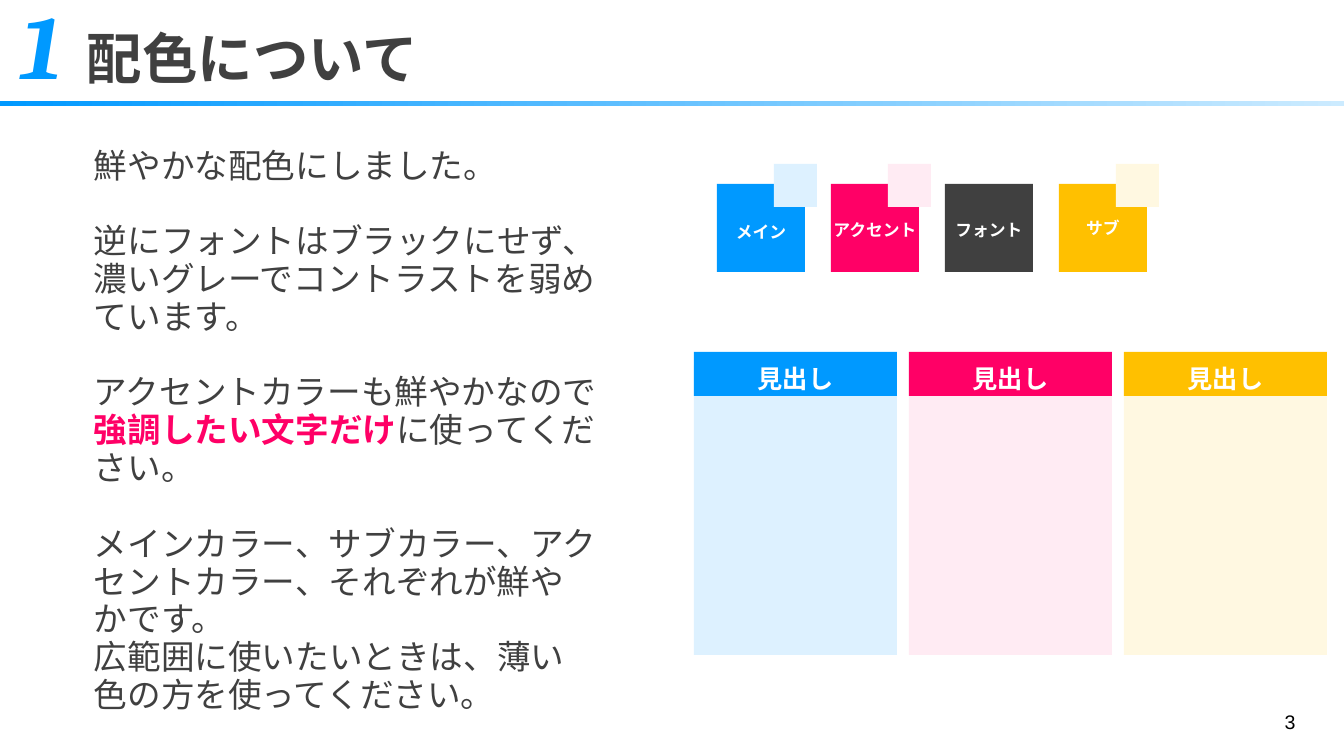
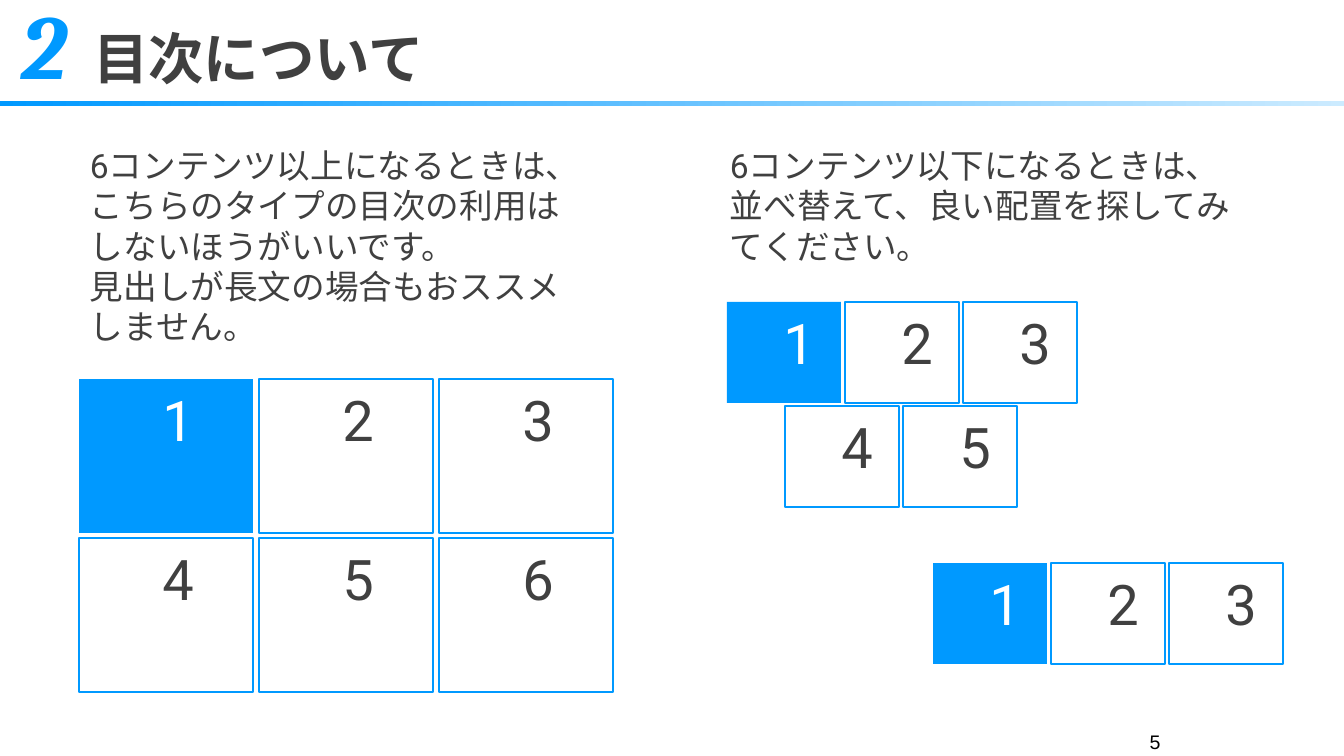
from lxml.etree import SubElement
from pptx import Presentation
from pptx.dml.color import RGBColor
from pptx.enum.shapes import MSO_SHAPE as Shape
from pptx.enum.text import MSO_ANCHOR as Anchor, PP_ALIGN as Align
from pptx.oxml.ns import qn
from pptx.util import Pt

PX = 9072
BLUE, PINK, YELLOW, GRAY = "0099FF", "FF0066", "FFC000", "404040"
PALE_BLUE, PALE_PINK, PALE_YELLOW = "DDF1FF", "FFEBF3", "FFF8E1"
WHITE, BLACK = "FFFFFF", "000000"


def color(code):
    return RGBColor.from_string(code)


def put(slide, place, text="", fill=None, line=None, size=24, font="Roboto", ink=GRAY,
        bold=False, italic=False, align=Align.LEFT, anchor=Anchor.TOP, inset=(10, 5, 10, 5),
        wrap=True, spacing=None, before=(), indent=0):
    box = [n * PX for n in place]
    if fill:
        item = slide.shapes.add_shape(Shape.RECTANGLE, *box)
        item.shadow.inherit = False
        item.fill.solid()
        item.fill.fore_color.rgb = color(fill)
        if line:
            item.line.color.rgb = color(line)
            item.line.width = Pt(1)
        else:
            item.line.fill.background()
    else:
        item = slide.shapes.add_textbox(*box)
    if not text:
        return item
    frame = item.text_frame
    frame.word_wrap = wrap
    frame.vertical_anchor = anchor
    frame.margin_left, frame.margin_top, frame.margin_right, frame.margin_bottom = [
        n * PX for n in inset]
    paragraphs = [text] if isinstance(text, str) else text
    for i, content in enumerate(paragraphs):
        para = frame.paragraphs[0] if i == 0 else frame.add_paragraph()
        para.alignment = align
        if spacing:
            para.line_spacing = spacing
        if i in before:
            para.space_before = spacing
        if indent:
            para._p.get_or_add_pPr().set("marL", str(indent * PX))
        for words, style in [(content, {})] if isinstance(content, str) else content:
            run = para.add_run()
            run.text = words
            run.font.size = Pt(style.get("size", size))
            run.font.name = style.get("font", font)
            run.font.bold = style.get("bold", bold)
            run.font.italic = style.get("italic", italic)
            run.font.color.rgb = color(style.get("ink", ink))
            SubElement(run.font._element, qn("a:ea")).set("typeface", run.font.name)
    return item


deck = Presentation()
deck.slide_width, deck.slide_height = 1344 * PX, 756 * PX

slides = []
for number, title, page, page_left, page_top in [
    ("1", "配色について", "3", 1260, 705),
    ("2", "目次について", "5", 1125, 725),
]:
    slide = deck.slides.add_slide(deck.slide_layouts[6])
    slides.append(slide)
    rule = put(slide, (0, 101, 1344, 5), fill=BLUE)
    rule.fill.gradient()
    rule.fill.gradient_angle = 0
    for stop, shade in zip(rule.fill.gradient_stops, (BLUE, "CCEBFF")):
        stop.color.rgb = color(shade)
    heading = [
        (number, dict(size=64.8, font="Cambria", ink=BLUE, italic=True)),
        (" ", dict(size=72)),
        (title, dict(size=39.6)),
    ]
    put(slide, (0, 0, 1344, 93), [heading], bold=True, anchor=Anchor.MIDDLE,
        spacing=0.9, indent=12)
    put(slide, (page_left, page_top, 60, 40), page, size=14, font="Arial", ink=BLACK,
        align=Align.CENTER)

colors_slide, contents_slide = slides

put(colors_slide, (84, 142, 523, 583), [
    "鮮やかな配色にしました。",
    "逆にフォントはブラックにせず、濃いグレーでコントラストを弱めています。",
    [("アクセントカラーも鮮やかなので", {}),
     ("強調したい文字だけ", dict(ink=PINK, bold=True)),
     ("に使ってください。", {})],
    "メインカラー、サブカラー、アクセントカラー、それぞれが鮮やかです。",
    "広範囲に使いたいときは、薄い色の方を使ってください。",
], spacing=Pt(27), before=(1, 2, 3))

for i, (label, shade, tint, label_top) in enumerate([
    ("メイン", BLUE, PALE_BLUE, 38),
    ("アクセント", PINK, PALE_PINK, 36),
    ("フォント", GRAY, None, 36),
    ("サブ", YELLOW, PALE_YELLOW, 34),
]):
    left = 717 + 114 * i
    put(colors_slide, (left, 184, 88, 88), label, fill=shade, size=12, ink=WHITE, bold=True,
        align=Align.CENTER, inset=(0, label_top, 0, 0), wrap=False)
    if tint:
        put(colors_slide, (left + 57, 164, 43, 43), fill=tint)

for i, (shade, tint) in enumerate([
    (BLUE, PALE_BLUE), (PINK, PALE_PINK), (YELLOW, PALE_YELLOW),
]):
    left = 694 + 215 * i
    put(colors_slide, (left, 366, 203, 289), fill=tint)
    put(colors_slide, (left, 352, 203, 44), "見出し", fill=shade, size=18, ink=WHITE,
        bold=True, align=Align.CENTER, inset=(10, 11, 10, 0))

put(contents_slide, (80, 140, 523, 214), [
    "6コンテンツ以上になるときは、こちらのタイプの目次の利用はしないほうがいいです。",
    "見出しが長文の場合もおススメしません。",
])
put(contents_slide, (720, 140, 523, 132),
    "6コンテンツ以下になるときは、並べ替えて、良い配置を探してみてください。")

BIG, SMALL = (174, 154, 180, 24), (114, 101, 118, 30)
for first, count, left, top, (width, height, pitch, shift) in [
    (1, 3, 79, 379, BIG),
    (4, 3, 79, 538, BIG),
    (1, 3, 727, 302, SMALL),
    (4, 2, 785, 406, SMALL),
    (1, 3, 933, 563, SMALL),
]:
    for i in range(count):
        current = first + i == 1
        put(contents_slide, (left + pitch * i, top, width, height), str(first + i),
            fill=BLUE if current else WHITE, line=None if current else BLUE, size=40,
            ink=WHITE if current else GRAY, align=Align.CENTER, inset=(shift, 7, 0, 0))

deck.save("out.pptx")
